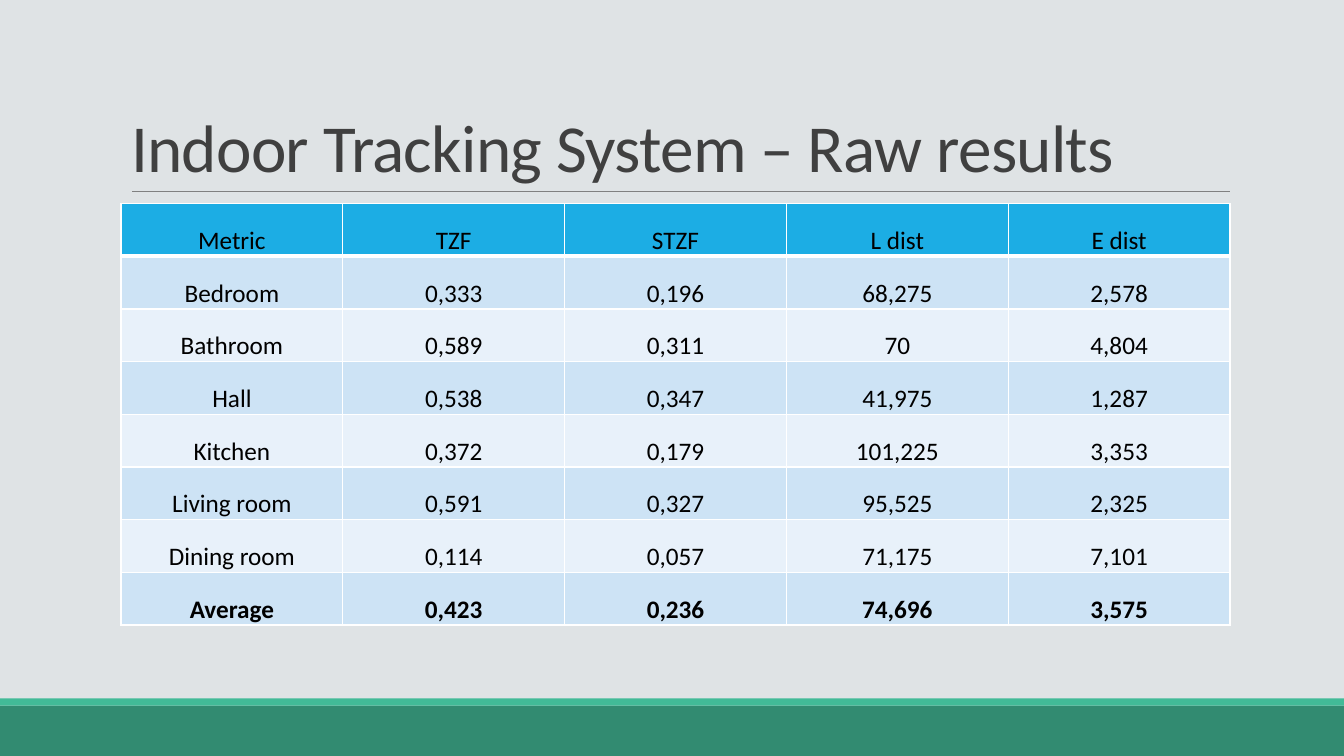
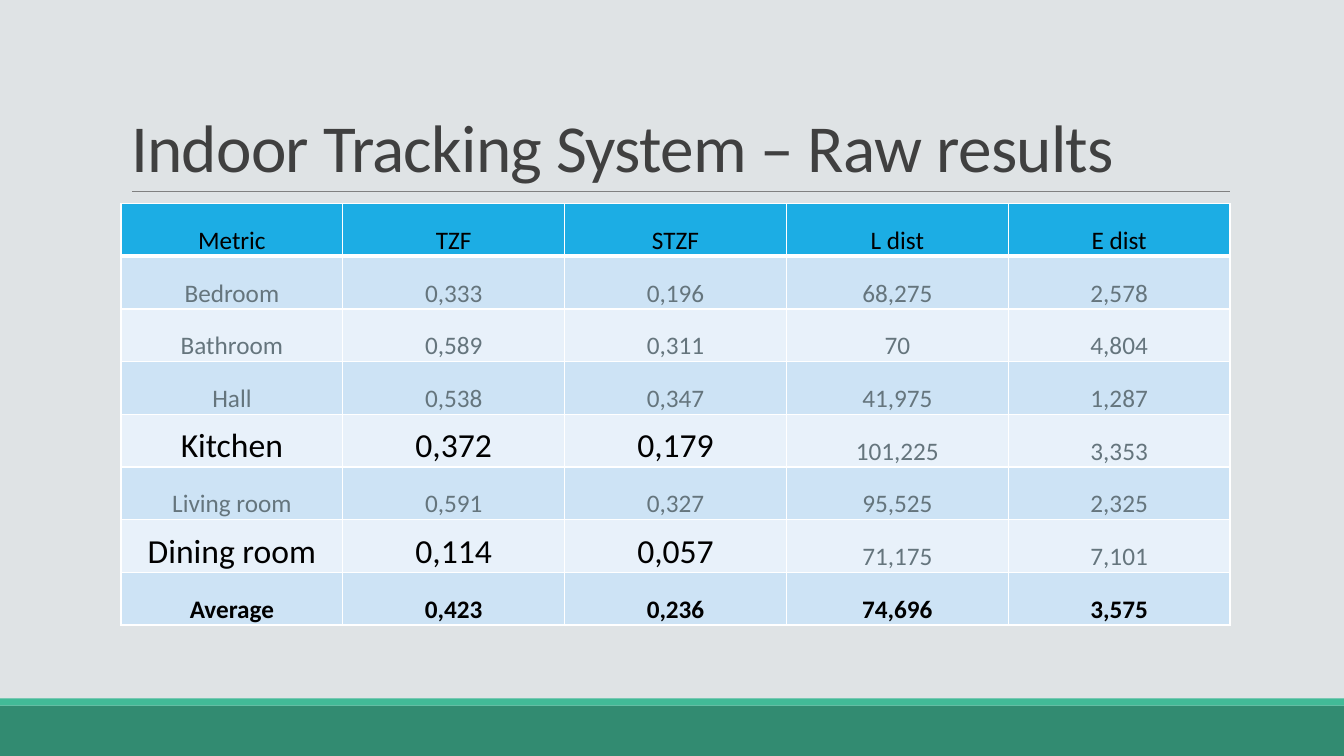
from dataclasses import dataclass

from lxml import etree
from pptx import Presentation
from pptx import util as u
from pptx.dml.color import RGBColor
from pptx.enum import shapes, text
from pptx.oxml import ns


@dataclass(frozen=True)
class Theme:
    font: str = "Calibri"
    background: str = "DFE3E5"
    band: str = "328B71"
    accent: str = "42BA97"
    rule: str = "808080"
    title: str = "404040"
    ink: str = "000000"
    muted: str = "65757D"
    header: str = "1CADE4"
    stripes: tuple = ("E8F1FA", "CDE3F5")
    border: str = "FFFFFF"
    title_size: int = 48
    cell_size: int = 18
    focus_size: int = 24


class ResultsDeck:
    """Slides on a grid: five columns right of a margin, fifteen rows from the top."""

    margin, column, row = u.Inches(1.2), u.Inches(2.2), u.Inches(0.5)

    def __init__(self, theme):
        self.theme = theme
        self.deck = Presentation()
        self.deck.slide_width, self.deck.slide_height = u.Inches(13.33), u.Inches(7.5)
        self.paint(self.deck.slide_master.background.fill, theme.background)
        self.page = None

    def x(self, columns):
        return self.margin + round(columns * self.column)

    def y(self, rows):
        return round(rows * self.row)

    @staticmethod
    def paint(fill, color):
        fill.solid()
        fill.fore_color.rgb = RGBColor.from_string(color)

    def style(self, para, size, color, bold=False):
        para.font.name = self.theme.font
        para.font.size = u.Pt(size)
        para.font.bold = bold
        para.font.color.rgb = RGBColor.from_string(color)

    def add_page(self, title):
        self.page = self.deck.slides.add_slide(self.deck.slide_layouts[5])
        self.add_band(14, 1, self.theme.band)
        self.add_band(13.86, 0.14, self.theme.accent)
        self.add_rule(0.05, 5, 3.8)
        self.set_title(title)

    def add_band(self, top, rows, color):
        band = self.page.shapes.add_shape(
            shapes.MSO_SHAPE.RECTANGLE, 0, self.y(top), self.deck.slide_width, self.y(rows))
        band.shadow.inherit = False
        self.paint(band.fill, color)
        band.line.fill.background()

    def add_rule(self, start, end, row):
        rule = self.page.shapes.add_connector(
            shapes.MSO_CONNECTOR.STRAIGHT, self.x(start), self.y(row), self.x(end), self.y(row))
        rule.line.width = u.Pt(0.5)
        rule.line.color.rgb = RGBColor.from_string(self.theme.rule)
        etree.SubElement(rule._element.spPr, ns.qn("a:effectLst"))

    def set_title(self, title):
        box = self.page.shapes.title
        box.left, box.top = self.x(0), self.y(0.62)
        box.width, box.height = 5 * self.column, self.y(3.18)
        frame = box.text_frame
        frame.text = title
        frame.auto_size = text.MSO_AUTO_SIZE.NONE
        frame.vertical_anchor = text.MSO_ANCHOR.BOTTOM
        para = frame.paragraphs[0]
        para.alignment = text.PP_ALIGN.LEFT
        para.line_spacing = 0.85
        self.style(para, self.theme.title_size, self.theme.title)
        para.runs[0]._r.get_or_add_rPr().set("spc", "-50")

    def add_table(self, records, focus=()):
        """Muting starts when focus names rows whose first three cells stand out."""
        table = self.page.shapes.add_table(
            len(records), len(records[0]), self.x(0), self.y(4.04),
            5 * self.column, self.y(8.36)).table
        table.first_row = table.horz_banding = False
        last = len(records) - 1
        for i, record in enumerate(records):
            for j, value in enumerate(record):
                size, color = self.theme.cell_size, self.theme.ink
                if focus and 0 < i < last:
                    if record[0] in focus and j < 3:
                        size = self.theme.focus_size
                    else:
                        color = self.theme.muted
                cell = table.cell(i, j)
                self.set_borders(cell, top=3 if i == 1 else 1, bottom=3 if i == 0 else 1)
                self.paint(cell.fill, self.theme.stripes[i % 2] if i else self.theme.header)
                self.set_cell_text(cell, value, size, color, bold=i == last)

    def set_cell_text(self, cell, value, size, color, bold):
        cell.margin_left = cell.margin_right = u.Inches(0.02)
        cell.margin_top, cell.margin_bottom = u.Inches(0.01), 0
        cell.vertical_anchor = text.MSO_ANCHOR.BOTTOM
        cell.text = value
        para = cell.text_frame.paragraphs[0]
        para.alignment = text.PP_ALIGN.CENTER
        self.style(para, size, color, bold)

    def set_borders(self, cell, top, bottom):
        properties = cell._tc.get_or_add_tcPr()
        for side, width in {"L": 1, "R": 1, "T": top, "B": bottom}.items():
            line = etree.SubElement(properties, ns.qn(f"a:ln{side}"), w=str(u.Pt(width)))
            fill = etree.SubElement(line, ns.qn("a:solidFill"))
            etree.SubElement(fill, ns.qn("a:srgbClr"), val=self.theme.border)


RESULTS = [
    ("Metric", "TZF", "STZF", "L dist", "E dist"),
    ("Bedroom", "0,333", "0,196", "68,275", "2,578"),
    ("Bathroom", "0,589", "0,311", "70", "4,804"),
    ("Hall", "0,538", "0,347", "41,975", "1,287"),
    ("Kitchen", "0,372", "0,179", "101,225", "3,353"),
    ("Living room", "0,591", "0,327", "95,525", "2,325"),
    ("Dining room", "0,114", "0,057", "71,175", "7,101"),
    ("Average", "0,423", "0,236", "74,696", "3,575"),
]


def main():
    results = ResultsDeck(Theme())
    for focus in ((), ("Kitchen", "Dining room")):
        results.add_page("Indoor Tracking System – Raw results")
        results.add_table(RESULTS, focus)
    results.deck.save("out.pptx")


if __name__ == "__main__":
    main()
